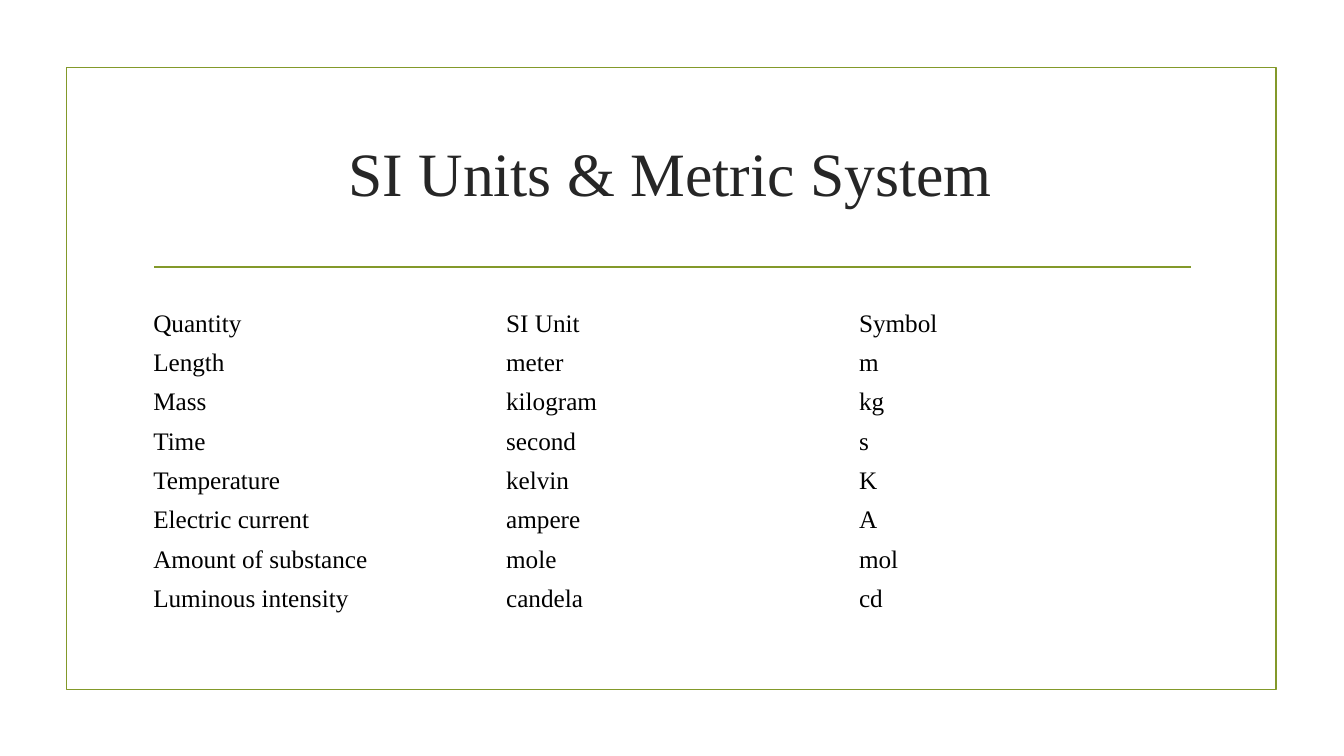
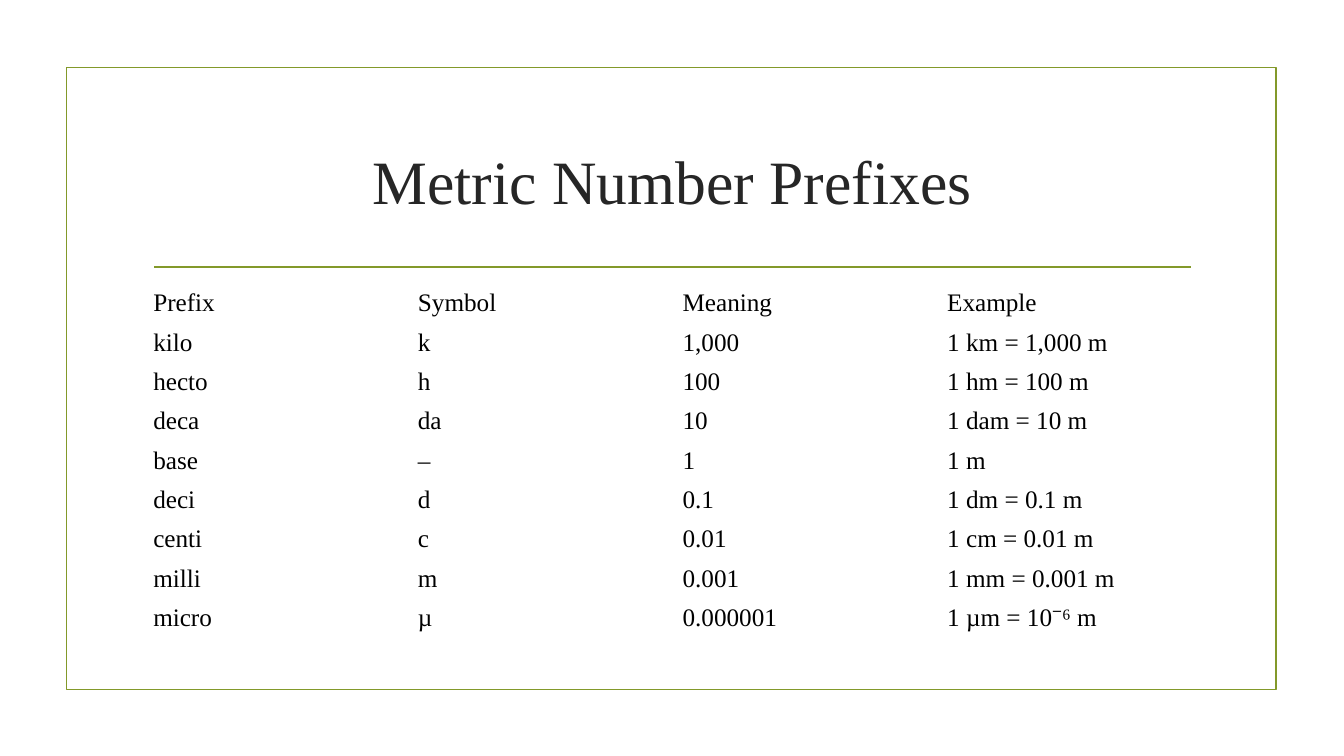
"""Build two slides on SI units and metric prefixes."""
from lxml import etree
from pptx import Presentation
from pptx.dml.color import RGBColor
from pptx.enum import shapes, text
from pptx.oxml.ns import qn
from pptx.util import Inches, Pt

COLORS = {"accent": "83992A", "title": "262626", "body": "000000"}
FONT = "Times New Roman"
TITLE_FORMAT = {"name": FONT, "size": Pt(44), "bold": False}
BODY_FORMAT = {"name": FONT, "size": Pt(18), "bold": False}
PLAIN_TABLE = "{2D5ABB26-0587-4C30-8999-92F81FD0307C}"
CONTENT_LEFT, CONTENT_WIDTH = 1.42, 10.5
ROW_HEIGHT = 0.37
CELL_FORMAT = {
    "margin_left": Inches(0.1),
    "margin_right": Inches(0.1),
    "margin_top": Inches(0.05),
    "margin_bottom": Inches(0.04),
    "vertical_anchor": text.MSO_ANCHOR.MIDDLE,
}

SLIDES = [
    {
        "title": "SI Units & Metric System",
        "title_at": (1.4, 0.99),
        "table_top": 3.01,
        "rows": [
            ("Quantity", "SI Unit", "Symbol"),
            ("Length", "meter", "m"),
            ("Mass", "kilogram", "kg"),
            ("Time", "second", "s"),
            ("Temperature", "kelvin", "K"),
            ("Electric current", "ampere", "A"),
            ("Amount of substance", "mole", "mol"),
            ("Luminous intensity", "candela", "cd"),
        ],
    },
    {
        "title": "Metric Number Prefixes",
        "title_at": (1.42, 1.07),
        "table_top": 2.81,
        "rows": [
            ("Prefix", "Symbol", "Meaning", "Example"),
            ("kilo", "k", "1,000", "1 km = 1,000 m"),
            ("hecto", "h", "100", "1 hm = 100 m"),
            ("deca", "da", "10", "1 dam = 10 m"),
            ("base", "–", "1", "1 m"),
            ("deci", "d", "0.1", "1 dm = 0.1 m"),
            ("centi", "c", "0.01", "1 cm = 0.01 m"),
            ("milli", "m", "0.001", "1 mm = 0.001 m"),
            ("micro", "µ", "0.000001", "1 µm = 10⁻⁶ m"),
        ],
    },
]


def apply_format(target, values):
    for name, value in values.items():
        setattr(target, name, value)


def write(para, words, values, color):
    span = para.add_run()
    span.text = words
    apply_format(span.font, values)
    span.font.color.rgb = RGBColor.from_string(COLORS[color])


def style_line(line):
    line.color.rgb = RGBColor.from_string(COLORS["accent"])
    line.width = Pt(1.25)


def add_frame(page):
    frame = page.shapes.add_shape(
        shapes.MSO_SHAPE.RECTANGLE, Inches(0.66), Inches(0.67), Inches(12), Inches(6.17))
    frame.shadow.inherit = False
    frame.fill.background()
    style_line(frame.line)
    rule = page.shapes.add_connector(
        shapes.MSO_CONNECTOR.STRAIGHT, Inches(1.53), Inches(2.65), Inches(11.81), Inches(2.65))
    style_line(rule.line)
    etree.SubElement(rule._element.spPr, qn("a:effectLst"))


def add_title(page, words, left, top):
    box = page.shapes.add_textbox(
        Inches(left), Inches(top), Inches(CONTENT_WIDTH), Inches(1.43))
    box.text_frame.word_wrap = True
    box.text_frame.vertical_anchor = text.MSO_ANCHOR.MIDDLE
    para = box.text_frame.paragraphs[0]
    para.alignment = text.PP_ALIGN.CENTER
    write(para, words, TITLE_FORMAT, "title")


def add_grid(page, rows, top):
    columns = len(rows[0])
    table = page.shapes.add_table(
        len(rows), columns, Inches(CONTENT_LEFT), Inches(top),
        Inches(CONTENT_WIDTH), Inches(ROW_HEIGHT * len(rows))).table
    table.first_row = table.horz_banding = False
    table._tbl.tblPr.find(qn("a:tableStyleId")).text = PLAIN_TABLE
    for row_index, row in enumerate(rows):
        for column_index, words in enumerate(row):
            cell = table.cell(row_index, column_index)
            apply_format(cell, CELL_FORMAT)
            cell.fill.background()
            write(cell.text_frame.paragraphs[0], words, BODY_FORMAT, "body")


def main():
    deck = Presentation()
    deck.slide_width, deck.slide_height = Inches(13.33), Inches(7.5)
    for content in SLIDES:
        page = deck.slides.add_slide(deck.slide_layouts[6])
        add_frame(page)
        add_title(page, content["title"], *content["title_at"])
        add_grid(page, content["rows"], content["table_top"])
    deck.save("out.pptx")


if __name__ == "__main__":
    main()
